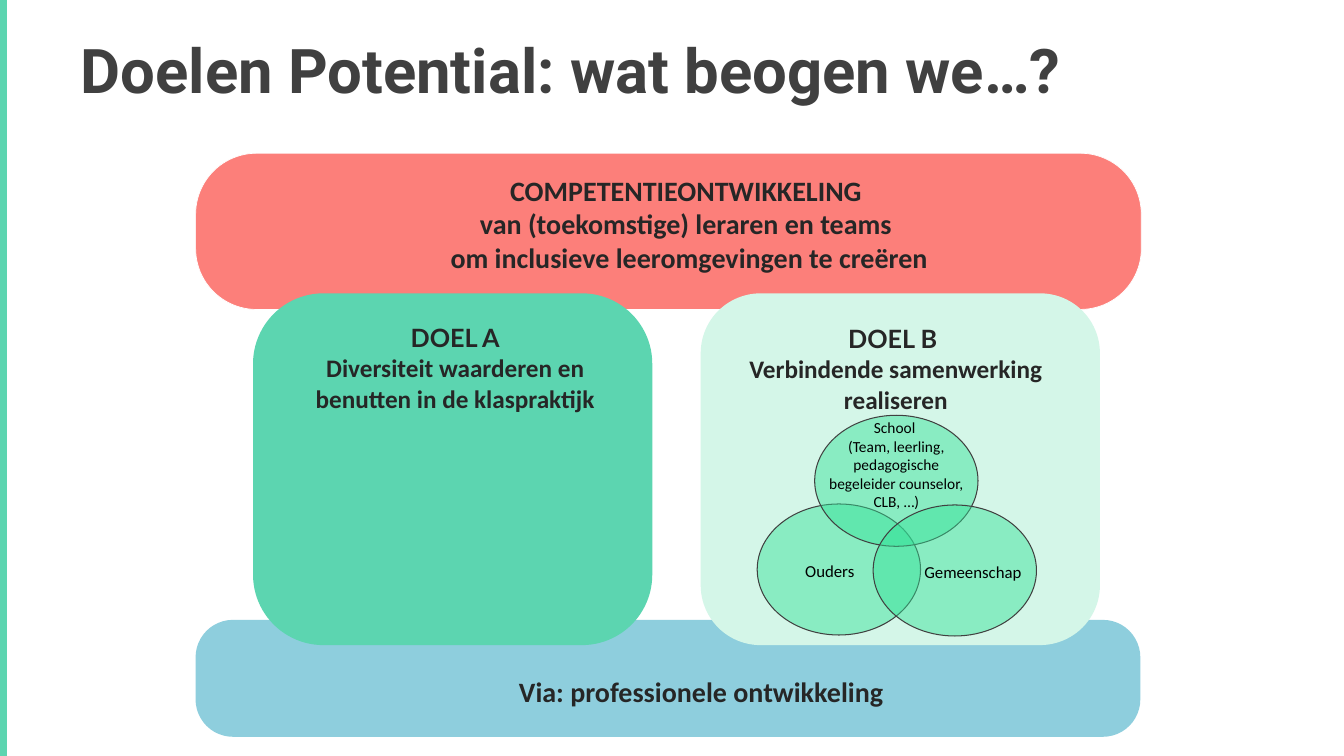
"""Build a slide on the goals of an inclusive teaching project."""
import pptx
import pptx.dml.color
import pptx.enum.shapes
import pptx.enum.text
import pptx.oxml.ns
import pptx.util
from lxml import etree

Inches = pptx.util.Inches
Pt = pptx.util.Pt
Kind = pptx.enum.shapes.MSO_SHAPE
Align = pptx.enum.text.PP_ALIGN
Anchor = pptx.enum.text.MSO_ANCHOR


def tint(code):
    return pptx.dml.color.RGBColor.from_string(code)


class Board:
    dark, grey, black = "262626", "404040", "000000"
    mint, pale, green = "5CD5B0", "D4F6E8", "32E297"
    coral, blue, white = "FC7F7A", "8ECEDD", "FFFFFF"
    body, head, label = "Calibri", "Roboto", "Lato"

    def __init__(self, deck):
        self.slide = deck.slides.add_slide(deck.slide_layouts[5])

    def run(self, para, text, size, font, color, bold):
        run = para.add_run()
        run.text = text
        run.font.size = Pt(size)
        run.font.name = font
        run.font.bold = bold
        run.font.color.rgb = tint(color)

    def title(self, text, box):
        shape = self.slide.shapes.title
        shape.left, shape.top, shape.width, shape.height = map(Inches, box)
        frame = shape.text_frame
        frame.auto_size = pptx.enum.text.MSO_AUTO_SIZE.NONE
        frame.vertical_anchor = Anchor.MIDDLE
        para = frame.paragraphs[0]
        para.alignment = Align.LEFT
        self.run(para, text, 44, self.head, self.grey, True)

    def shape(self, kind, box, fill, round=None, line=None, width=0.75, alpha=None):
        shape = self.slide.shapes.add_shape(kind, *map(Inches, box))
        shape.shadow.inherit = False
        shape.fill.solid()
        shape.fill.fore_color.rgb = tint(fill)
        if round is not None:
            shape.adjustments[0] = round
        if line:
            shape.line.color.rgb = tint(line)
            shape.line.width = Pt(width)
        else:
            shape.line.fill.background()
        if alpha:
            name = pptx.oxml.ns.qn
            color = shape.element.spPr.find(name("a:solidFill"))[0]
            etree.SubElement(color, name("a:alpha")).set("val", str(alpha * 1000))

    def text(self, box, lines, size, color=dark, bold=True, first=None):
        frame = self.slide.shapes.add_textbox(*map(Inches, box)).text_frame
        frame.word_wrap = True
        for i, line in enumerate(lines):
            para = frame.paragraphs[0] if i == 0 else frame.add_paragraph()
            para.alignment = Align.CENTER
            font = first if first and i == 0 else self.body
            self.run(para, line, size, font, color, bold)


def main():
    deck = pptx.Presentation()
    deck.slide_width, deck.slide_height = Inches(13.33), Inches(7.5)
    board = Board(deck)

    board.shape(Kind.RECTANGLE, (0, 0, 0.07, 7.5), board.mint)
    board.title("Doelen Potential: wat beogen we…?", (0.7, 0.26, 11.85, 0.84))

    panel = Kind.ROUNDED_RECTANGLE
    board.shape(panel, (1.94, 6.15, 9.37, 1.16), board.blue, 0.32)
    board.shape(panel, (1.94, 1.52, 9.38, 1.55), board.coral, 0.39, board.white, 0.5)
    board.shape(panel, (6.95, 2.91, 3.96, 3.49), board.pale, 0.17)
    board.shape(panel, (2.51, 2.91, 3.96, 3.49), board.mint, 0.2)

    for left, top in ((7.51, 5), (8.08, 4.12), (8.66, 5.01)):
        board.shape(Kind.OVAL, (left, top, 1.62, 1.3), board.green,
                    line=board.grey, alpha=46)

    school = ["School ", "(Team, leerling, pedagogische begeleider counselor, CLB, …)"]
    for box, lines, size in (
        ((8.08, 4.1, 1.62, 1.03), school, 11),
        ((7.42, 5.51, 1.62, 0.3), ["Ouders"], 12),
        ((8.84, 5.52, 1.62, 0.3), ["Gemeenschap"], 12),
    ):
        board.text(box, lines, size, board.black, False)

    board.text((2.67, 3.15, 3.69, 1.58),
               ["DOEL A", "Diversiteit waarderen en benutten in de klaspraktijk"],
               18, first=board.label)
    board.text((7.04, 3.16, 3.69, 1.01),
               ["DOEL B ", "Verbindende samenwerking realiseren"],
               18, first=board.label)
    board.text((3.58, 1.67, 6.51, 1.11),
               ["COMPETENTIEONTWIKKELING ", "van (toekomstige) leraren en teams ",
                "om inclusieve leeromgevingen te creëren"], 20)
    board.text((3.7, 6.64, 6.51, 0.44), ["Via: professionele ontwikkeling"], 20)

    deck.save("out.pptx")


if __name__ == "__main__":
    main()
